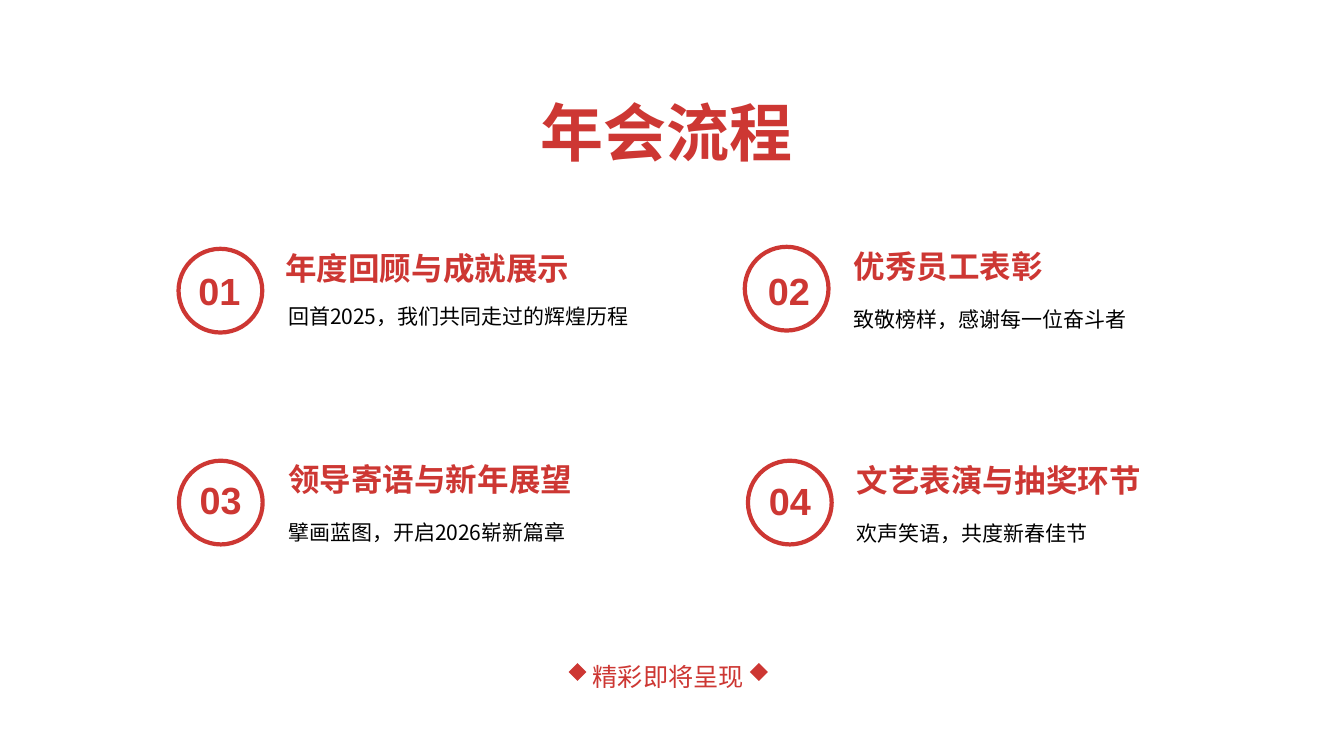
import pptx
import pptx.dml.color
import pptx.enum.shapes
import pptx.enum.text
import pptx.oxml.ns
import pptx.util
from lxml import etree

Cm = pptx.util.Cm
Pt = pptx.util.Pt
Kind = pptx.enum.shapes.MSO_SHAPE
RED = pptx.dml.color.RGBColor(0xCD, 0x37, 0x33)
BLACK = pptx.dml.color.RGBColor(0, 0, 0)
HAN = "Noto Sans CJK SC"

# Number, circle, digits, heading and detail corners in cm, then wording
STEPS = [
    ("01", (4.5, 6.27), (5, 6.86), (7.19, 6.27), (7.26, 7.42),
     "年度回顾与成就展示", "回首2025，我们共同走过的辉煌历程"),
    ("02", (18.77, 6.22), (19.35, 6.86), (21.51, 6.22), (21.51, 7.49),
     "优秀员工表彰", "致敬榜样，感谢每一位奋斗者"),
    ("03", (4.51, 11.61), (5.03, 12.12), (7.26, 11.58), (7.26, 12.85),
     "领导寄语与新年展望", "擘画蓝图，开启2026崭新篇章"),
    ("04", (18.85, 11.61), (19.38, 12.14), (21.59, 11.61), (21.59, 12.88),
     "文艺表演与抽奖环节", "欢声笑语，共度新春佳节"),
]


class Deck:
    def __init__(self):
        self.prs = pptx.Presentation()
        self.prs.slide_width = Cm(33.87)
        self.prs.slide_height = Cm(19.05)
        self.slide = self.prs.slides.add_slide(self.prs.slide_layouts[6])

    def text(self, words, spot, size, pts, font=HAN, color=RED, bold=False, lead=1.0):
        """Add one line of text; spot and size are pairs in cm."""
        box = self.slide.shapes.add_textbox(*map(Cm, spot + size))
        frame = box.text_frame
        frame.word_wrap = True
        frame.vertical_anchor = pptx.enum.text.MSO_ANCHOR.MIDDLE
        frame.margin_left = frame.margin_right = 0
        frame.margin_top = frame.margin_bottom = 0
        para = frame.paragraphs[0]
        para.line_spacing = lead
        run = para.add_run()
        run.text = words
        run.font.size = Pt(pts)
        run.font.bold = bold
        run.font.name = font
        run.font.color.rgb = color
        east = etree.SubElement(run.font._element, pptx.oxml.ns.qn("a:ea"))
        east.set("typeface", font)

    def shape(self, kind, spot, side):
        item = self.slide.shapes.add_shape(kind, *map(Cm, spot + (side, side)))
        item.shadow.inherit = False
        return item

    def ring(self, spot):
        item = self.shape(Kind.OVAL, spot, 2.11)
        item.fill.background()
        item.line.color.rgb = RED
        item.line.width = Pt(3)

    def gem(self, spot):
        item = self.shape(Kind.DIAMOND, spot, 0.45)
        item.fill.solid()
        item.fill.fore_color.rgb = RED
        item.line.fill.background()

    def step(self, num, ring, digits, head, note, title, detail):
        self.ring(ring)
        self.text(num, digits, (1.14, 1.07), 27, font="Arial", bold=True, lead=0.9)
        self.text(title, head, (11.2, 0.97), 22.5, bold=True)
        self.text(detail, note, (11.05, 0.86), 15, color=BLACK, lead=1.4)


def main():
    deck = Deck()
    deck.text("年会流程", (13.61, 2.69), (6.48, 1.57), 45, bold=True, lead=0.8)
    for step in STEPS:
        deck.step(*step)
    deck.text("精彩即将呈现", (14.94, 16.59), (4.62, 0.84), 18, lead=1.1)
    for left in (14.33, 18.9):
        deck.gem((left, 16.71))
    deck.prs.save("out.pptx")


if __name__ == "__main__":
    main()
